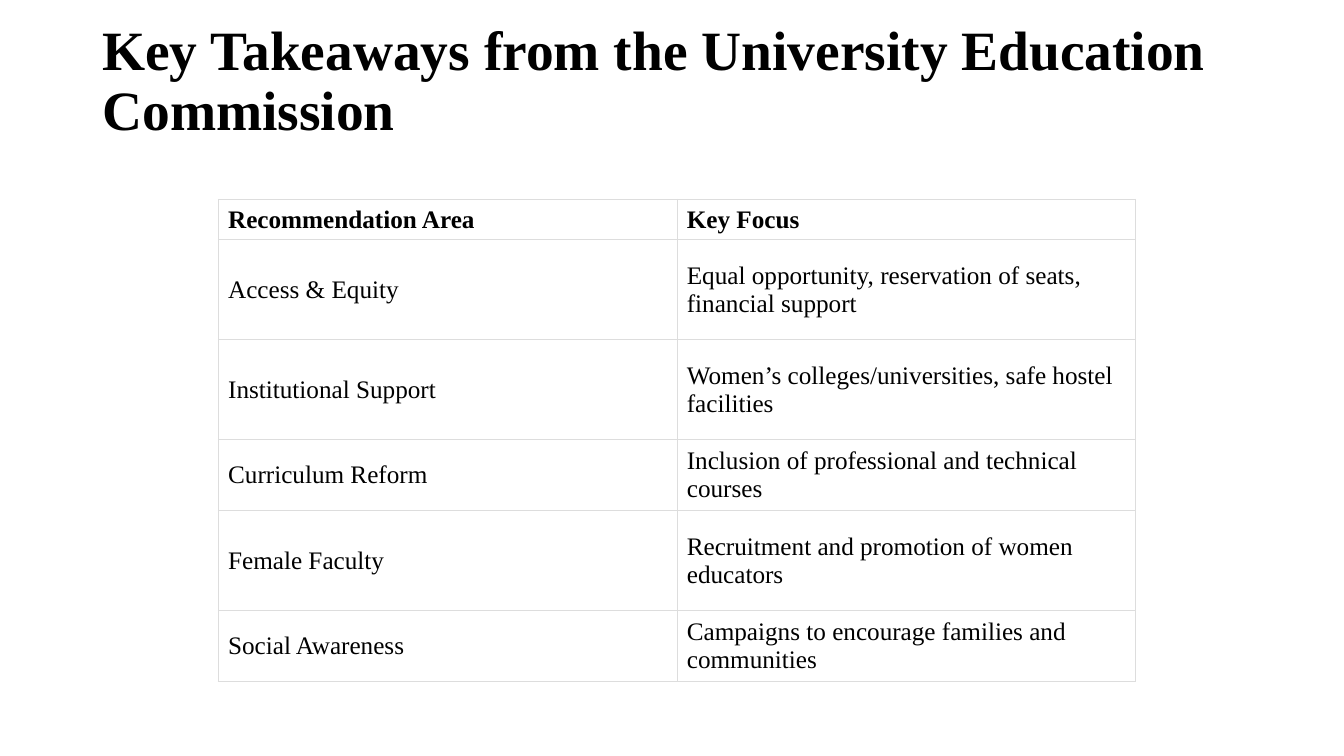
from pptx import Presentation
from pptx import util as u
from pptx.dml import color
from pptx.enum import text
from pptx.oxml import parse_xml
from pptx.oxml.ns import nsdecls


def tint(code):
    return color.RGBColor.from_string(code)


def style(para, size, bold):
    font = para.runs[0].font
    font.name = "Times New Roman"
    font.size = u.Pt(size)
    font.bold = bold
    font.color.rgb = tint("000000")


deck = Presentation()
deck.slide_width = u.Cm(33.87)
deck.slide_height = u.Cm(19.05)
slide = deck.slides.add_slide(deck.slide_layouts[6])

title = slide.shapes.add_textbox(u.Cm(2.33), u.Cm(1.01), u.Cm(29.21), u.Cm(3.68))
frame = title.text_frame
frame.word_wrap = True
frame.vertical_anchor = text.MSO_ANCHOR.MIDDLE
frame.margin_bottom = u.Cm(1.65)
frame.text = "Key Takeaways from the University Education Commission"
frame.paragraphs[0].line_spacing = 0.9
style(frame.paragraphs[0], 39.6, True)

rows = [
    (1.01, "Recommendation Area", "Key Focus"),
    (2.52, "Access & Equity", "Equal opportunity, reservation of seats, financial support"),
    (2.52, "Institutional Support", "Women’s colleges/universities, safe hostel facilities"),
    (1.76, "Curriculum Reform", "Inclusion of professional and technical courses"),
    (2.52, "Female Faculty", "Recruitment and promotion of women educators"),
    (1.76, "Social Awareness", "Campaigns to encourage families and communities"),
]
high = sum(row[0] for row in rows)
table = slide.shapes.add_table(
    len(rows), 2, u.Cm(5.5), u.Cm(5.02), u.Cm(23.12), u.Cm(high)
).table
table.horz_banding = False
for col in table.columns:
    col.width = u.Cm(11.56)

for i, (tall, *words) in enumerate(rows):
    table.rows[i].height = u.Cm(tall)
    for j, word in enumerate(words):
        cell = table.cell(i, j)
        cell.text = word
        cell.vertical_anchor = text.MSO_ANCHOR.MIDDLE
        cell.margin_left = cell.margin_right = u.Cm(0.25)
        cell.margin_top = cell.margin_bottom = u.Cm(0.13)
        style(cell.text_frame.paragraphs[0], 18, i == 0)
        props = cell._tc.get_or_add_tcPr()
        for side in ("lnL", "lnR", "lnT", "lnB"):
            props.append(parse_xml(
                f'<a:{side} {nsdecls("a")} w="{u.Pt(0.75)}"><a:solidFill>'
                f'<a:srgbClr val="DDDDDD"/></a:solidFill></a:{side}>'
            ))
        cell.fill.solid()
        cell.fill.fore_color.rgb = tint("FFFFFF")

deck.save("out.pptx")
